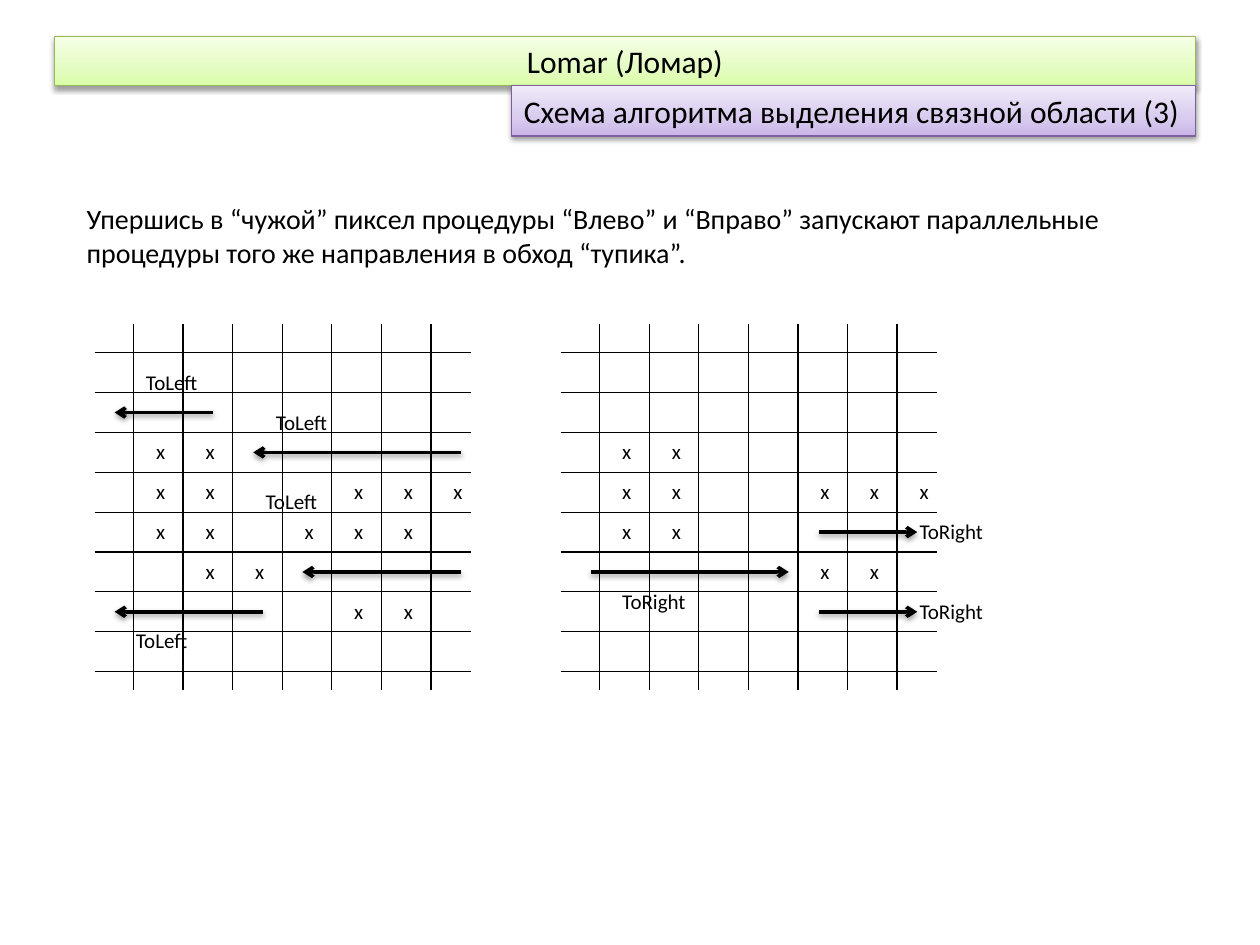
from lxml.etree import SubElement as Sub
from pptx import Presentation
from pptx.dml.color import RGBColor as Rgb
from pptx.enum.shapes import MSO_CONNECTOR as Conn, MSO_SHAPE as Form
from pptx.enum.text import MSO_ANCHOR as Anchor, MSO_AUTO_SIZE as Auto, PP_ALIGN as Align
from pptx.oxml.ns import qn
from pptx.util import Inches, Pt

FONT = "Calibri"
HEX = {
    "ink": "000000",
    "green": "98B955",
    "violet": "7D60A0",
}
FADE = {
    "green": ["DAFDA7", "E4FCC2", "F5FFE7"],
    "violet": ["C9B5E8", "D8CBEE", "F0EAF9"],
}
STOPS = [0, 35, 100]

TOP, TALL, WIDE = 2.57, 2.91, 2.99
COLS, ROWS = 7, 9
COL_GAP, ROW_GAP = 2.36 / 6, 2.53 / 8

GRIDS = [
    {
        "left": 0.75,
        "marks": {2: [0, 1], 3: [0, 1, 4, 5, 6], 4: [0, 1, 3, 4, 5], 5: [1, 2], 6: [4, 5]},
        "arrows": [(1, 0.94, 0.16), (2, 2.91, 1.26), (5, 2.91, 1.65), (6, 1.34, 0.16)],
        "word": "ToLeft",
        "notes": [(0.31, 2.88, 0.71), (1.34, 3.2, 0.71), (1.26, 3.83, 0.71), (0.23, 4.93, 0.71)],
    },
    {
        "left": 4.45,
        "marks": {2: [0, 1], 3: [0, 1, 4, 5, 6], 4: [0, 1], 5: [4, 5]},
        "arrows": [(4, 2.05, 2.83), (5, 0.24, 1.81), (6, 2.05, 2.83)],
        "word": "ToRight",
        "notes": [(2.75, 4.07, 0.71), (0.39, 4.62, 0.94), (2.75, 4.7, 0.79)],
    },
]


def write(shape, text, size):
    frame = shape.text_frame
    frame.word_wrap = True
    run = frame.paragraphs[0].add_run()
    run.text = text
    font = run.font
    font.name, font.size = FONT, Pt(size)
    font.color.rgb = Rgb.from_string(HEX["ink"])
    return frame


def add_text(slide, text, left, top, wide, high=0.3, size=12):
    box = slide.shapes.add_textbox(Inches(left), Inches(top), Inches(wide), Inches(high))
    write(box, text, size).auto_size = Auto.SHAPE_TO_FIT_TEXT


def add_line(slide, x1, y1, x2, y2, width=0.75):
    line = slide.shapes.add_connector(
        Conn.STRAIGHT, Inches(x1), Inches(y1), Inches(x2), Inches(y2))
    line.line.color.rgb = Rgb.from_string(HEX["ink"])
    line.line.width = Pt(width)
    Sub(line._element.spPr, qn("a:effectLst"))
    return line


def cast(shape):
    effect = shape._element.spPr.find(qn("a:effectLst"))
    shade = Sub(effect, qn("a:outerShdw"), blurRad=str(Pt(3.1)),
                dist=str(Pt(1.6)), dir="5400000", rotWithShape="0")
    color = Sub(shade, qn("a:srgbClr"), val=HEX["ink"])
    Sub(color, qn("a:alpha"), val="38000")


def add_arrow(slide, x1, x2, y):
    line = add_line(slide, x1, y, x2, y, 2)
    Sub(line.line._get_or_add_ln(), qn("a:tailEnd"), type="arrow")
    cast(line)


def style_bar(bar, tone, text):
    bar.fill.gradient()
    bar.fill.gradient_angle = 90
    stops = bar._element.spPr.find(qn("a:gradFill")).find(qn("a:gsLst"))
    for stop in list(stops):
        stops.remove(stop)
    for place, color in zip(STOPS, FADE[tone]):
        stop = Sub(stops, qn("a:gs"), pos=str(place * 1000))
        Sub(stop, qn("a:srgbClr"), val=color)
    bar.line.color.rgb = Rgb.from_string(HEX[tone])
    bar.line.width = Pt(0.75)
    bar.shadow.inherit = False
    cast(bar)
    return write(bar, text, 18)


def add_title(slide):
    bar = slide.shapes.title
    bar.left, bar.top = Inches(0.43), Inches(0.29)
    bar.width, bar.height = Inches(9.06), Inches(0.39)
    frame = style_bar(bar, "green", "Lomar (Ломар)")
    frame.auto_size = Auto.NONE
    frame.vertical_anchor = Anchor.MIDDLE
    frame.paragraphs[0].alignment = Align.CENTER


def add_topic(slide):
    bar = slide.shapes.add_shape(
        Form.RECTANGLE, Inches(4.06), Inches(0.68), Inches(5.43), Inches(0.4))
    frame = style_bar(bar, "violet", "Схема алгоритма выделения связной области (3)")
    frame.auto_size = Auto.SHAPE_TO_FIT_TEXT
    frame.vertical_anchor = Anchor.TOP
    frame.paragraphs[0].alignment = Align.LEFT


def add_grid(slide, grid):
    left = grid["left"]
    xs = [left + 0.31 + i * COL_GAP for i in range(COLS)]
    ys = [2.8 + i * ROW_GAP for i in range(ROWS)]
    for x in xs:
        add_line(slide, x, TOP, x, TOP + TALL)
    for y in ys:
        add_line(slide, left, y, left + WIDE, y)
    for row, cols in grid["marks"].items():
        for col in cols:
            add_text(slide, "х", xs[col] + 0.08, ys[row], 0.24)
    for row, start, end in grid["arrows"]:
        add_arrow(slide, left + start, left + end, ys[row] + ROW_GAP / 2)
    for x, y, wide in grid["notes"]:
        add_text(slide, grid["word"], left + x, y, wide)


def main():
    deck = Presentation()
    deck.slide_width, deck.slide_height = Inches(10), Inches(7.5)
    slide = deck.slides.add_slide(deck.slide_layouts[5])
    add_title(slide)
    add_topic(slide)
    add_text(slide, "Упершись в “чужой” пиксел процедуры “Влево” и “Вправо” запускают "
             "параллельные процедуры того же направления в обход “тупика”.",
             0.59, 1.55, 8.5, 0.64, 16)
    for grid in GRIDS:
        add_grid(slide, grid)
    deck.save("out.pptx")


if __name__ == "__main__":
    main()
